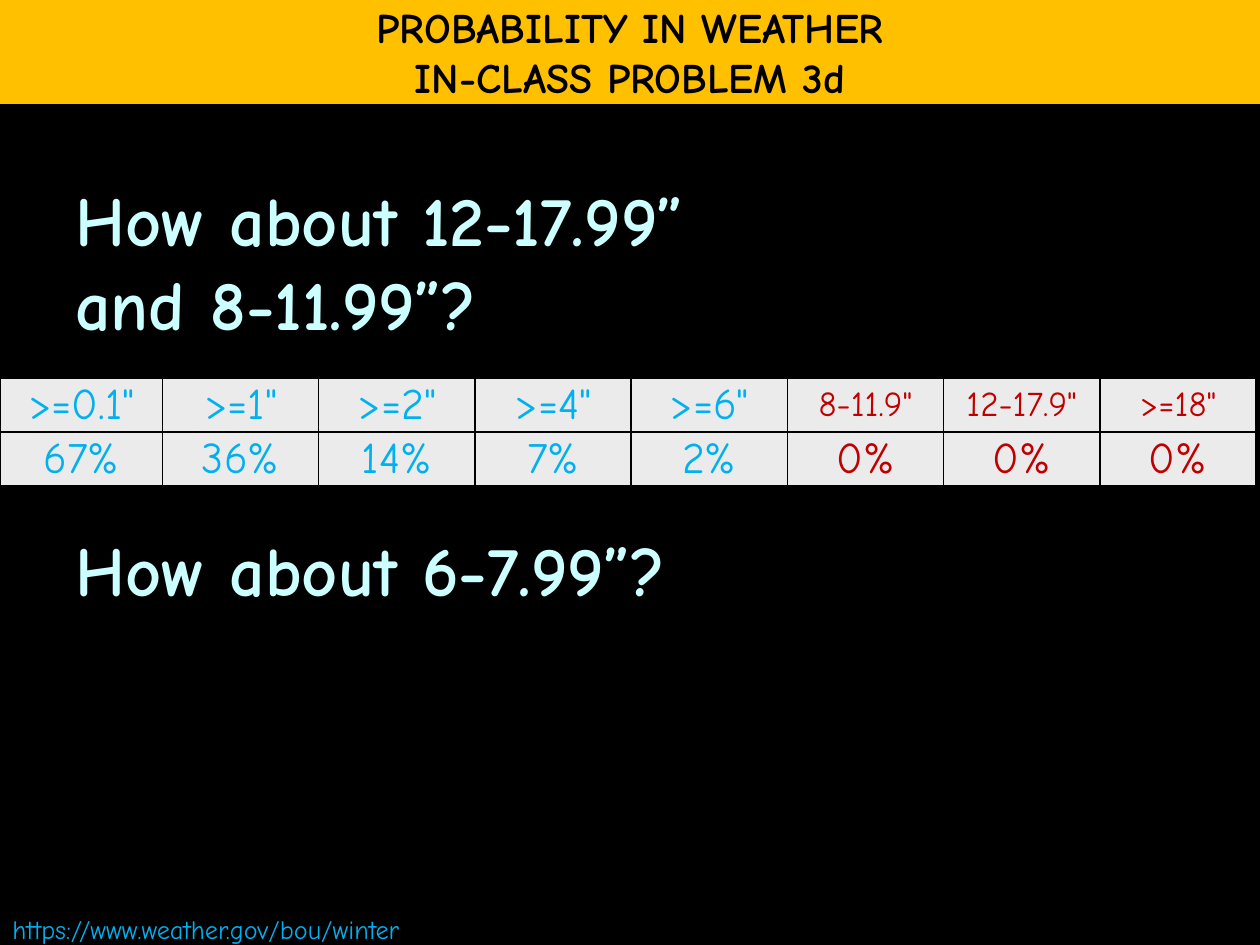
from dataclasses import dataclass

from lxml.etree import SubElement
from pptx import Presentation
from pptx.dml.color import RGBColor
from pptx.enum.shapes import MSO_SHAPE
from pptx.enum.text import MSO_ANCHOR, PP_ALIGN
from pptx.oxml.ns import qn
from pptx.util import Inches, Pt


@dataclass(frozen=True)
class Theme:
    font: str = "Comic Neue"
    black: str = "000000"
    banner: str = "FFC000"
    question: str = "CCFFFF"
    blue: str = "00B0F0"
    red: str = "C00000"
    cell: str = "EBEBEB"
    title_pt: int = 24
    question_pt: int = 40
    table_pt: int = 25
    range_pt: int = 20
    source_pt: int = 15


class SlideBuilder:
    """Holds the theme and the current slide; boxes are shares of its size."""

    def __init__(self, prs, theme):
        self.prs, self.theme = prs, theme
        self.s = prs.slides.add_slide(prs.slide_layouts[6])
        self.fill(self.s.background, theme.black)

    def box(self, left, top, width, height):
        w, h = self.prs.slide_width, self.prs.slide_height
        return [int(v) for v in (left * w, top * h, width * w, height * h)]

    def fill(self, target, color):
        target.fill.solid()
        target.fill.fore_color.rgb = RGBColor.from_string(color)

    def add_lines(self, tf, lines, size, color, bold=False, align=PP_ALIGN.LEFT):
        """Each line is a (text, space before in points) pair."""
        for i, (text, space) in enumerate(lines):
            p = tf.add_paragraph() if i else tf.paragraphs[0]
            p.alignment = align
            p.space_before = Pt(space)
            r = p.add_run()
            r.text = text
            r.font.name, r.font.size, r.font.bold = self.theme.font, Pt(size), bold
            r.font.color.rgb = RGBColor.from_string(color)

    def text(self, box, lines, size, color, bold=False):
        tf = self.s.shapes.add_textbox(*self.box(*box)).text_frame
        tf.word_wrap = True
        self.add_lines(tf, lines, size, color, bold)

    def banner(self, box, lines):
        sp = self.s.shapes.add_shape(MSO_SHAPE.RECTANGLE, *self.box(*box))
        sp.shadow.inherit = False
        self.fill(sp, self.theme.banner)
        sp.line.fill.background()
        tf = sp.text_frame
        tf.word_wrap = False
        tf.vertical_anchor = MSO_ANCHOR.MIDDLE
        self.add_lines(tf, lines, self.theme.title_pt, self.theme.black, True, PP_ALIGN.CENTER)

    def borders(self, cell):
        tc_pr = cell._tc.get_or_add_tcPr()
        for i, side in enumerate(("lnL", "lnR", "lnT", "lnB")):
            ln = tc_pr.makeelement(qn(f"a:{side}"), {"w": str(Pt(1))})
            color = SubElement(SubElement(ln, qn("a:solidFill")), qn("a:srgbClr"))
            color.set("val", self.theme.black)
            tc_pr.insert(i, ln)

    def table(self, box, columns, rows, style):
        """style(row, column) gives the text size and colour of a cell."""
        frame = self.s.shapes.add_table(len(rows), len(columns), *self.box(*box))
        table = frame.table
        for column, width in zip(table.columns, columns):
            column.width = Inches(width)
        for i, row in enumerate(rows):
            for j, value in enumerate(row):
                cell = table.cell(i, j)
                cell.margin_left = cell.margin_right = cell.margin_top = Inches(0.01)
                cell.margin_bottom = 0
                cell.vertical_anchor = MSO_ANCHOR.MIDDLE
                self.fill(cell, self.theme.cell)
                self.borders(cell)
                self.add_lines(cell.text_frame, [(value, 0)], *style(i, j), align=PP_ALIGN.CENTER)


def main():
    prs = Presentation()
    prs.slide_width, prs.slide_height = Inches(10), Inches(7.5)
    theme = Theme()
    slide = SlideBuilder(prs, theme)

    # Questions: the last one leaves two lines free for the table
    gap = 0.2 * theme.question_pt
    table_gap = 2 * 1.2 * theme.question_pt + gap
    questions = [
        ("How about 12-17.99”", gap),
        ("and 8-11.99”?", 0),
        ("How about 6-7.99”?", table_gap),
    ]
    slide.text((0.05, 0.18, 0.9, 0.82), questions, theme.question_pt, theme.question, True)

    # Data source
    source = [("https://www.weather.gov/bou/winter", 0)]
    slide.text((0, 0.96, 0.5, 0.04), source, theme.source_pt, theme.blue)

    # Snowfall probabilities: the last three ranges are red
    rows = [
        ['>=0.1"', '>=1"', '>=2"', '>=4"', '>=6"', '8-11.9"', '12-17.9"', '>=18"'],
        ["67%", "36%", "14%", "7%", "2%", "0%", "0%", "0%"],
    ]

    def cell_style(row, column):
        if column < 5:
            return theme.table_pt, theme.blue
        return (theme.table_pt if row else theme.range_pt), theme.red

    slide.table((0, 0.4, 1, 0.11), [1.29] + [1.24] * 7, rows, cell_style)

    # Title banner
    slide.banner((0, 0, 1, 0.11), [("PROBABILITY IN WEATHER", 0), ("IN-CLASS PROBLEM 3d", 0)])

    prs.save("out.pptx")


if __name__ == "__main__":
    main()
